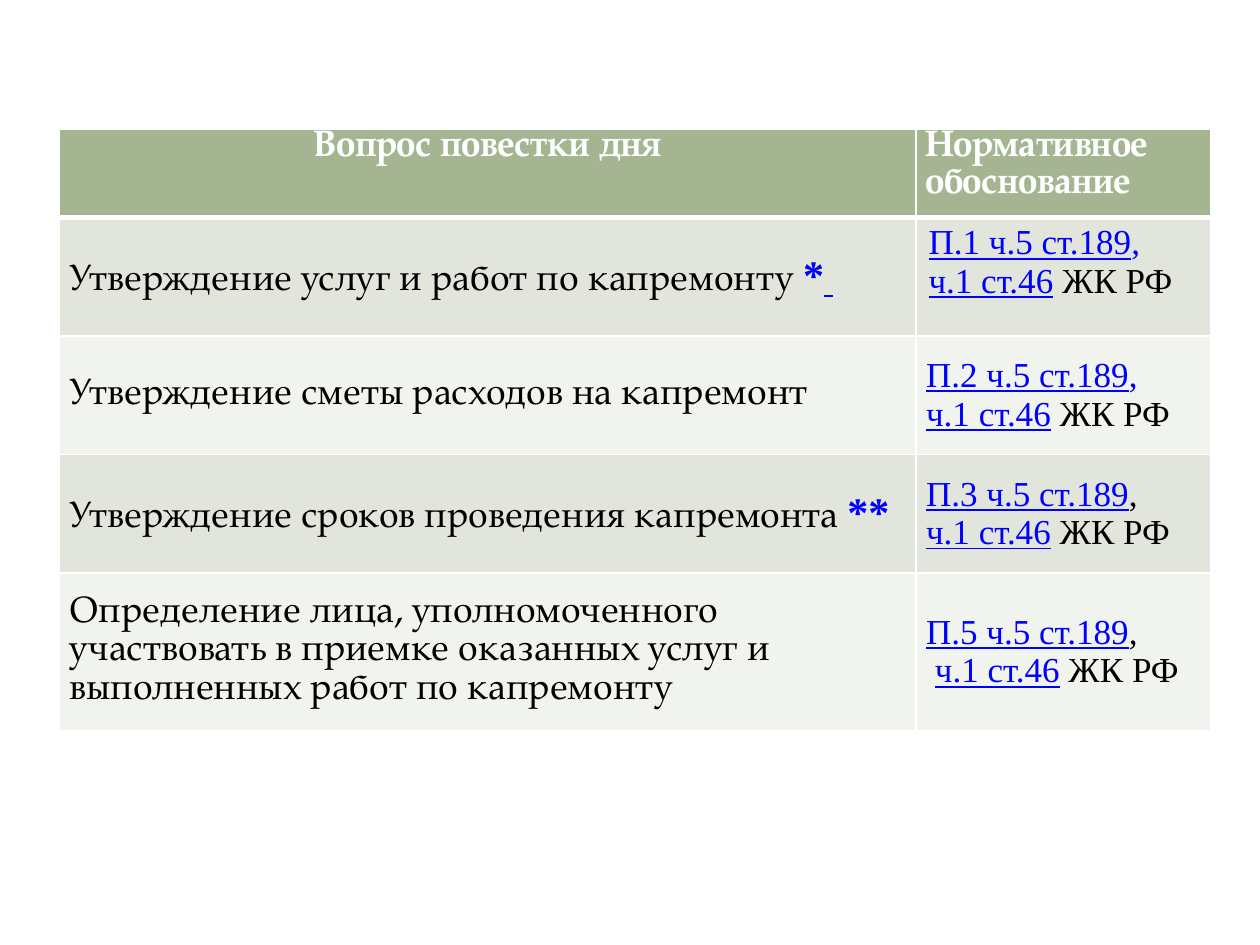
import pptx
import pptx.dml.color
import pptx.enum.text
import pptx.oxml.ns
import lxml.etree

Cm = pptx.util.Cm
Pt = pptx.util.Pt
RGBColor = pptx.dml.color.RGBColor
ALIGN = pptx.enum.text.PP_ALIGN
ANCHOR = pptx.enum.text.MSO_ANCHOR

WHITE = RGBColor(0xFF, 0xFF, 0xFF)
BLACK = RGBColor(0, 0, 0)
BLUE = RGBColor(0, 0, 0xFF)
HEAD = RGBColor(0xA5, 0xB5, 0x92)
BANDS = [RGBColor(0xE1, 0xE5, 0xDC), RGBColor(0xF0, 0xF3, 0xEE)]
SERIF = "TeX Gyre Pagella"
TIMES = "Times New Roman"

WIDTHS = [17.27, 5.94]
HEIGHTS = [1.78, 2.39, 2.39, 2.39, 3.18]
TITLES = ["Вопрос повестки дня", "Нормативное обоснование"]
TOPICS = [
    ("Утверждение услуг и работ по капремонту ", "*"),
    ("Утверждение сметы расходов на капремонт", ""),
    ("Утверждение сроков проведения капремонта ", "**"),
    ("Определение лица, уполномоченного участвовать в приемке "
     "оказанных услуг и выполненных работ по капремонту", ""),
]
RULES = [("П.1", BLUE, ""), ("П.2", BLUE, ""), ("П.3", BLACK, ""), ("П.5", BLACK, " ")]


def add_text(para, text, size=20, face=TIMES, color=BLACK, bold=False, under=False):
    """Add one formatted run to a paragraph."""
    run = para.add_run()
    run.text = text
    font = run.font
    font.size, font.name, font.bold, font.underline = Pt(size), face, bold, under
    font.color.rgb = color


def set_edge(cell, low=1):
    """Draw white borders round a cell, with the lower one as thick as given."""
    props = cell._tc.get_or_add_tcPr()
    for spot, (side, width) in enumerate([("L", 1), ("R", 1), ("T", 1), ("B", low)]):
        line = lxml.etree.Element(pptx.oxml.ns.qn(f"a:ln{side}"), w=str(Pt(width)))
        fill = lxml.etree.SubElement(line, pptx.oxml.ns.qn("a:solidFill"))
        lxml.etree.SubElement(fill, pptx.oxml.ns.qn("a:srgbClr"), val=str(WHITE))
        props.insert(spot, line)


def set_cell(cell, color, side, top, anchor=ANCHOR.MIDDLE, low=1):
    """Set fill, margins, anchor and borders of a cell."""
    cell.fill.solid()
    cell.fill.fore_color.rgb = color
    cell.margin_left = cell.margin_right = Cm(side)
    cell.margin_top = cell.margin_bottom = Cm(top)
    cell.vertical_anchor = anchor
    set_edge(cell, low)


def fill_head(cells):
    """Write the header row."""
    for cell, title, align in zip(cells, TITLES, [ALIGN.CENTER, ALIGN.JUSTIFY]):
        set_cell(cell, HEAD, 0.18, 0, ANCHOR.TOP, 3)
        para = cell.text_frame.paragraphs[0]
        para.alignment, para.line_spacing = align, Pt(21)
        add_text(para, title, 21, SERIF, WHITE, bold=True)


def fill_topic(cell, text, stars, last):
    """Write an agenda item and its footnote stars."""
    para = cell.text_frame.paragraphs[0]
    para.alignment = ALIGN.LEFT if last else ALIGN.JUSTIFY
    add_text(para, text, 21, SERIF)
    if stars:
        add_text(para, stars, 24, color=BLUE, bold=True)
    else:
        para.line_spacing = Pt(22)
    if stars == "*":
        add_text(para, " ", 21, SERIF, BLUE, under=True)


def fill_rule(cell, point, tint, lead, align):
    """Write the two lines that name the legal ground."""
    frame = cell.text_frame
    first, second = frame.paragraphs[0], frame.add_paragraph()
    for para in (first, second):
        para.alignment, para.line_spacing = align, Pt(22)
    add_text(first, f"{point} ч.5 ст.189", color=BLUE, under=True)
    add_text(first, ",", color=tint)
    if lead:
        add_text(second, lead)
    add_text(second, "ч.1 ст.46", color=BLUE, under=True)
    add_text(second, " ЖК РФ")


def add_grid(slide, left, top):
    """Place the agenda table with its corner at the given point."""
    grid = slide.shapes.add_table(
        len(HEIGHTS), len(WIDTHS), Cm(left), Cm(top),
        Cm(sum(WIDTHS)), Cm(sum(HEIGHTS))).table
    for col, width in zip(grid.columns, WIDTHS):
        col.width = Cm(width)
    for row, height in zip(grid.rows, HEIGHTS):
        row.height = Cm(height)
    fill_head(grid.rows[0].cells)
    for num, (topic, rule) in enumerate(zip(TOPICS, RULES)):
        color = BANDS[num % 2]
        name, ground = grid.rows[num + 1].cells
        set_cell(name, color, 0.2, 0.1)
        fill_topic(name, *topic, last=num == len(TOPICS) - 1)
        if num == 0:
            set_cell(ground, color, 0.25, 0.13, ANCHOR.TOP)
        else:
            set_cell(ground, color, 0.2, 0.1)
        fill_rule(ground, *rule, ALIGN.JUSTIFY if num else ALIGN.LEFT)


def main():
    """Build the slide and save it."""
    deck = pptx.Presentation()
    deck.slide_width, deck.slide_height = Cm(25.4), Cm(19.05)
    slide = deck.slides.add_slide(deck.slide_layouts[6])
    add_grid(slide, 1.2, 2.6)
    deck.save("out.pptx")


if __name__ == "__main__":
    main()
